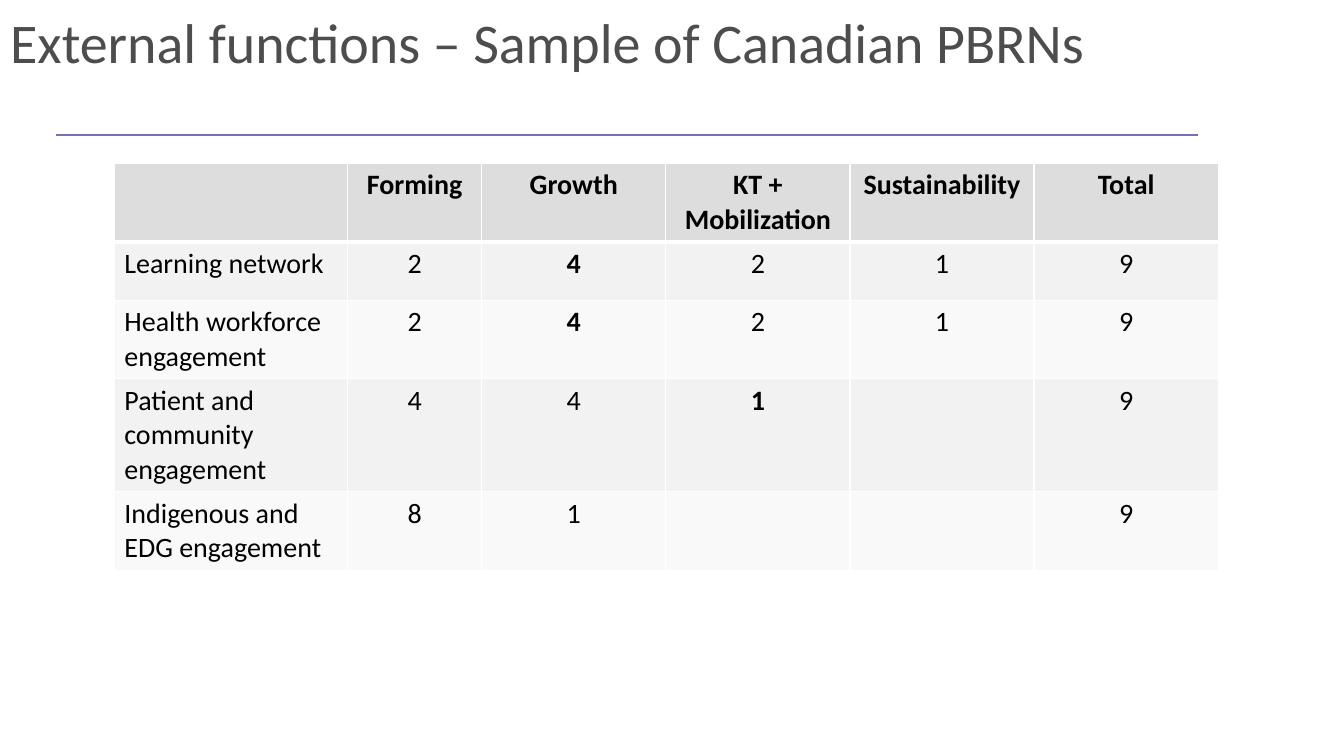
from lxml import etree
from pptx import Presentation
from pptx import util as u
from pptx.dml.color import RGBColor
from pptx.enum import shapes, text
from pptx.oxml import ns

TITLE = "External functions – Sample of Canadian PBRNs"
HEADINGS = ("", "Forming", "Growth", "KT + Mobilization", "Sustainability", "Total")
FUNCTIONS = (
    ("Learning network", "2", "4", "2", "1", "9"),
    ("Health workforce engagement", "2", "4", "2", "1", "9"),
    ("Patient and community engagement", "4", "4", "1", "", "9"),
    ("Indigenous and EDG engagement", "8", "1", "", "", "9"),
)
EMPHASIZED = {(1, 2), (2, 2), (3, 3)}  # (row, column), header is row 0

FONT = "Calibri"
GREY = RGBColor(0x4D, 0x4D, 0x4D)
RULE = RGBColor(0x76, 0x70, 0xB3)
BLACK = RGBColor(0, 0, 0)
WHITE = RGBColor(0xFF, 0xFF, 0xFF)
HEADER_FILL = RGBColor(0xDD, 0xDD, 0xDD)
BANDS = (RGBColor(0xF2, 0xF2, 0xF2), RGBColor(0xF9, 0xF9, 0xF9))

COLUMN_WIDTHS = [5.88, 3.38] + [4.64] * 4
ROW_HEIGHT = 1.47


def format_runs(paragraph, size, color, bold=False):
    for run in paragraph.runs:
        run.font.name = FONT
        run.font.size = u.Pt(size)
        run.font.color.rgb = color
        run.font.bold = bold


def add_borders(cell, top, bottom):
    """White cell borders, with widths in points; the sides are 1 pt."""
    properties = cell._tc.get_or_add_tcPr()
    for side, width in (("L", 1), ("R", 1), ("T", top), ("B", bottom)):
        border = etree.SubElement(properties, ns.qn("a:ln" + side), w=str(u.Pt(width)))
        fill = etree.SubElement(border, ns.qn("a:solidFill"))
        etree.SubElement(fill, ns.qn("a:srgbClr"), val=str(WHITE))


def add_title(slide):
    title = slide.shapes.title
    title.left, title.top, title.width, title.height = (
        u.Cm(0), u.Cm(0), u.Cm(31.17), u.Cm(2.29))
    frame = title.text_frame
    frame.text = TITLE
    frame.word_wrap = True
    frame.auto_size = text.MSO_AUTO_SIZE.NONE
    frame.vertical_anchor = text.MSO_ANCHOR.MIDDLE
    heading = frame.paragraphs[0]
    heading.alignment = text.PP_ALIGN.LEFT
    heading.line_spacing = 0.9
    format_runs(heading, 40, GREY)


def add_rule(slide):
    rule = slide.shapes.add_connector(
        shapes.MSO_CONNECTOR.STRAIGHT, u.Cm(1.42), u.Cm(3.4), u.Cm(30.2), u.Cm(3.4))
    rule.line.color.rgb = RULE
    rule.line.width = u.Pt(1)
    etree.SubElement(rule._element.spPr, ns.qn("a:effectLst"))


def add_functions_table(slide):
    rows = (HEADINGS,) + FUNCTIONS
    table = slide.shapes.add_table(
        len(rows), len(HEADINGS), u.Cm(2.88), u.Cm(4.11),
        u.Cm(sum(COLUMN_WIDTHS)), u.Cm(ROW_HEIGHT * len(rows))).table
    for column, width in zip(table.columns, COLUMN_WIDTHS):
        column.width = u.Cm(width)
    for r, row in enumerate(rows):
        table.rows[r].height = u.Cm(ROW_HEIGHT)
        for c, content in enumerate(row):
            cell = table.cell(r, c)
            add_borders(cell, top=3 if r == 1 else 1, bottom=3 if r == 0 else 1)
            cell.fill.solid()
            cell.fill.fore_color.rgb = BANDS[(r - 1) % 2] if r else HEADER_FILL
            cell.text_frame.text = content
            entry = cell.text_frame.paragraphs[0]
            entry.alignment = text.PP_ALIGN.CENTER if c else text.PP_ALIGN.LEFT
            format_runs(entry, 20, BLACK, bold=r == 0 or (r, c) in EMPHASIZED)


def main():
    deck = Presentation()
    deck.slide_width, deck.slide_height = u.Cm(33.87), u.Cm(19.05)
    slide = deck.slides.add_slide(deck.slide_layouts.get_by_name("Title Only"))
    add_rule(slide)
    add_title(slide)
    add_functions_table(slide)
    deck.save("out.pptx")


if __name__ == "__main__":
    main()
